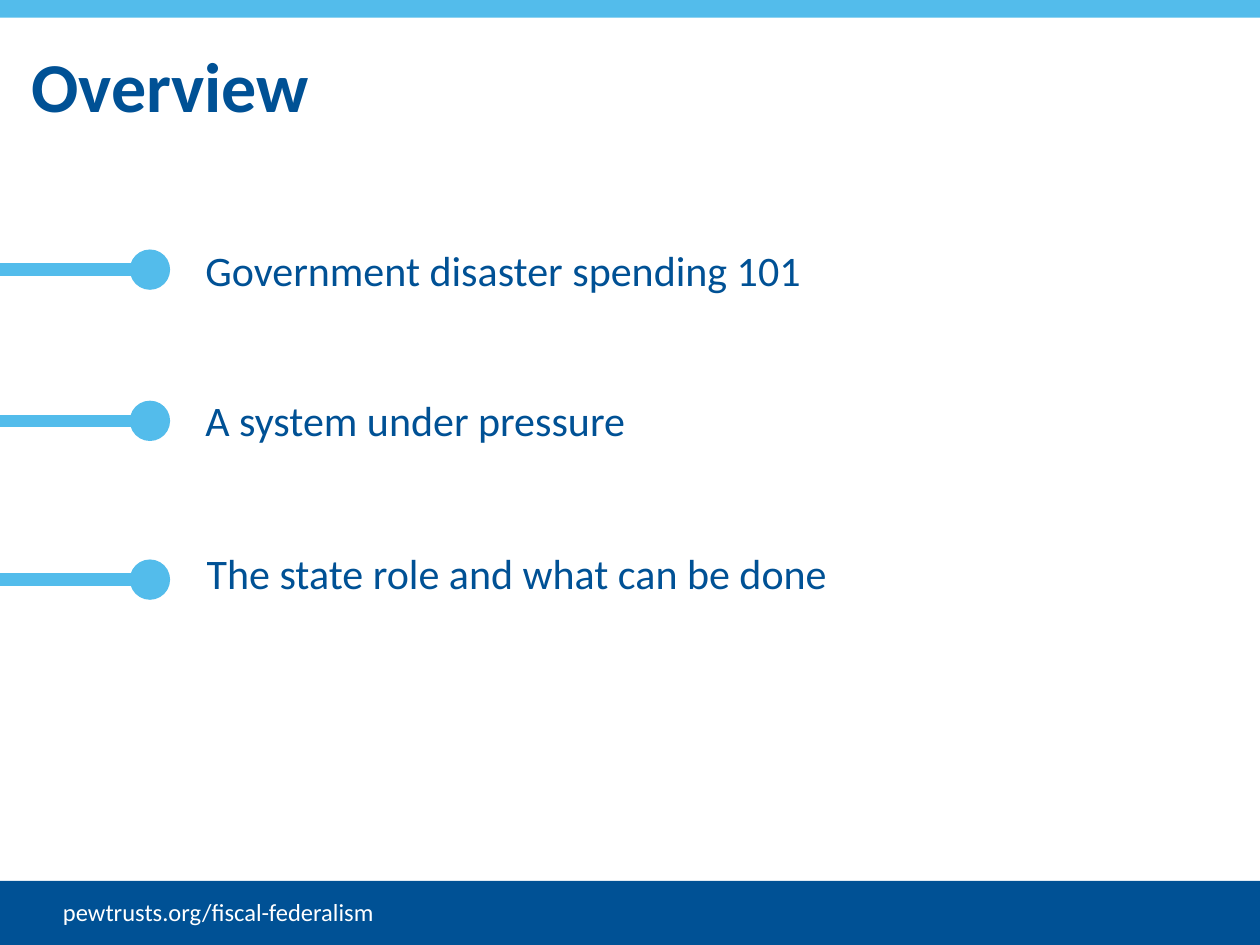
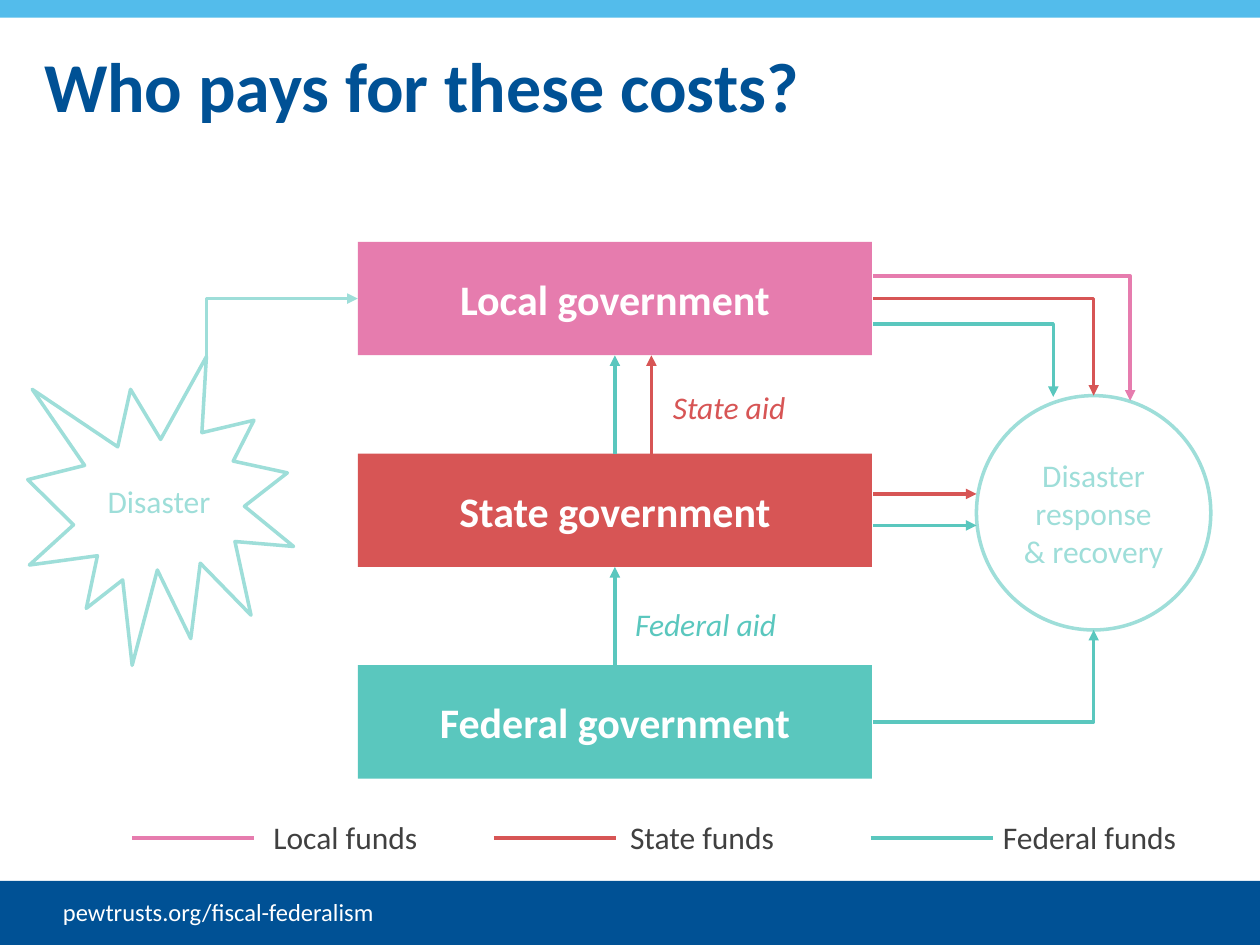
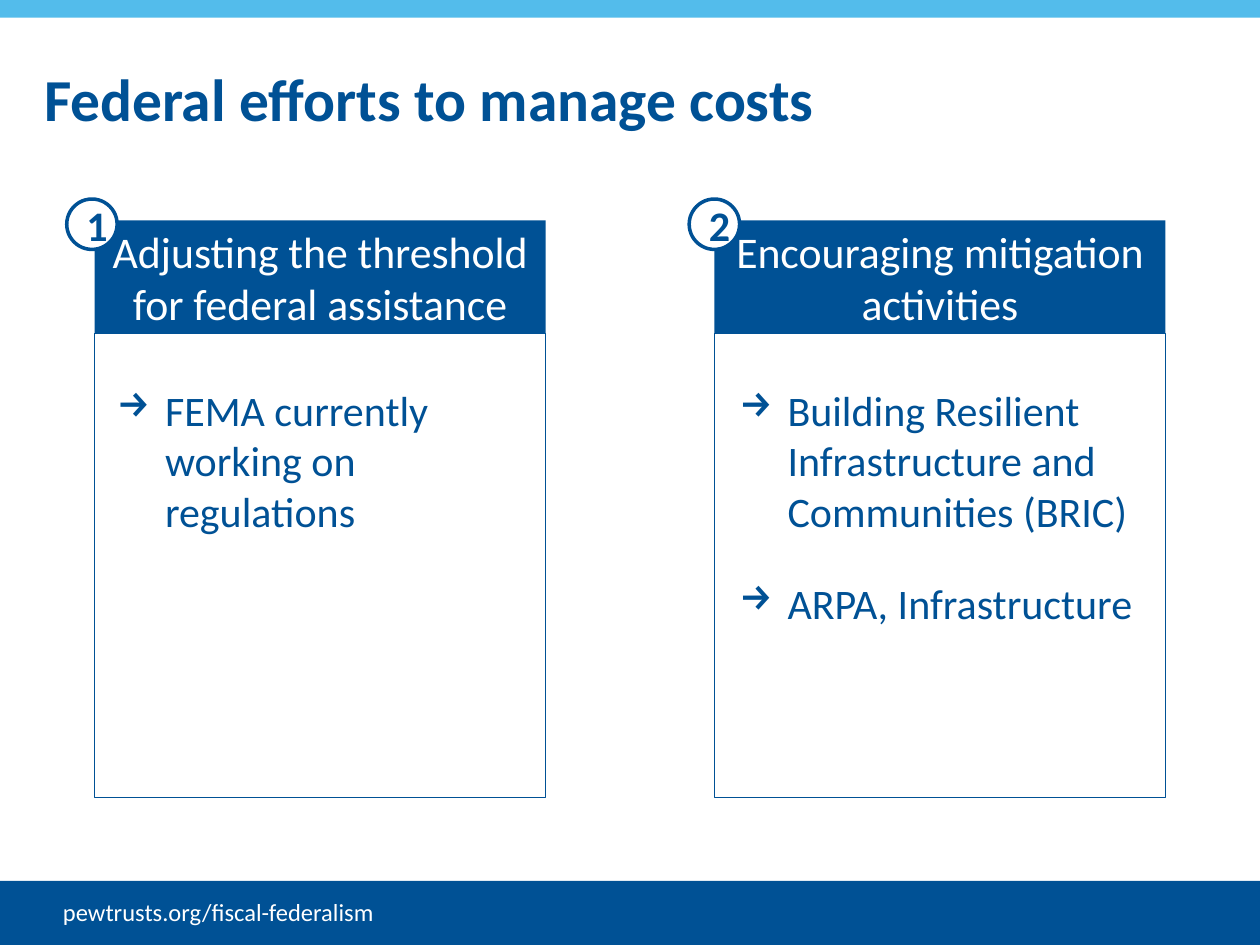
from lxml import etree
from pptx import Presentation
from pptx.dml.color import RGBColor
from pptx.enum.shapes import MSO_CONNECTOR, MSO_SHAPE
from pptx.enum.text import MSO_ANCHOR, PP_ALIGN
from pptx.oxml.ns import qn
from pptx.util import Inches, Pt

RECT, OVAL, BURST = MSO_SHAPE.RECTANGLE, MSO_SHAPE.OVAL, MSO_SHAPE.EXPLOSION1
STRAIGHT, ELBOW = MSO_CONNECTOR.STRAIGHT, MSO_CONNECTOR.ELBOW
LEFT, CENTER = PP_ALIGN.LEFT, PP_ALIGN.CENTER
TOP, MIDDLE = MSO_ANCHOR.TOP, MSO_ANCHOR.MIDDLE
SIDE_TOP, SIDE_BOTTOM = 0, 2

FONT = "Calibri"
NAVY, SKY, WHITE, GRAY = "005195", "53BCEB", "FFFFFF", "404040"
LOCAL, STATE, FEDERAL, DISASTER = "E67CAE", "D75555", "5AC7BE", "9EDED9"


def rgb(value):
    return RGBColor.from_string(value)


def inches(*lengths):
    return [Inches(length) for length in lengths]


def write(frame, paragraphs, size, color, bold=False, italic=False, align=LEFT,
          anchor=TOP, spacing=None, bullet=None):
    frame.word_wrap = True
    frame.vertical_anchor = anchor
    for index, words in enumerate(paragraphs):
        paragraph = frame.paragraphs[0] if index == 0 else frame.add_paragraph()
        paragraph.alignment = align
        if spacing:
            paragraph.line_spacing = spacing
        if bullet:
            paragraph.space_after = Pt(24)
            properties = paragraph._p.get_or_add_pPr()
            properties.set("marL", str(Inches(0.38)))
            properties.set("indent", str(-Inches(0.38)))
            etree.SubElement(properties, qn("a:buChar")).set("char", bullet)
        run = paragraph.add_run()
        run.text = words
        font = run.font
        font.name, font.size = FONT, Pt(size)
        font.bold, font.italic = bold, italic
        font.color.rgb = rgb(color)


def add_label(slide, box, paragraphs, size, color, **style):
    frame = slide.shapes.add_textbox(*inches(*box)).text_frame
    frame.margin_left = frame.margin_right = 0
    write(frame, paragraphs, size, color, **style)


def add_block(slide, kind, box, fill=None, line=None, width=2):
    block = slide.shapes.add_shape(kind, *inches(*box))
    block.shadow.inherit = False
    if fill:
        block.fill.solid()
        block.fill.fore_color.rgb = rgb(fill)
    else:
        block.fill.background()
    if line:
        block.line.color.rgb = rgb(line)
        block.line.width = Pt(width)
    else:
        block.line.fill.background()
    return block


def add_line(slide, start, end, color, width=2, arrow=None, kind=STRAIGHT):
    """Draw a line; arrow is "headEnd" (at start) or "tailEnd" (at end)."""
    line = slide.shapes.add_connector(kind, *inches(*start, *end))
    line.line.color.rgb = rgb(color)
    line.line.width = Pt(width)
    properties = line._element.spPr
    if arrow:
        etree.SubElement(line.line._get_or_add_ln(), qn(f"a:{arrow}")).set("type", "triangle")
    if kind == ELBOW:  # one corner: across first, then up or down
        properties.find(qn("a:prstGeom")).set("prst", "bentConnector2")
    etree.SubElement(properties, qn("a:effectLst"))
    return line


def add_framed_slide(deck, title, left, top, width, size=40):
    """Blank slide with the shared bands, footer address and title."""
    slide = deck.slides.add_slide(deck.slide_layouts[6])
    add_block(slide, RECT, (0, 0, 10, 0.14), SKY)
    add_block(slide, RECT, (0, 6.99, 10, 0.51), NAVY)
    add_label(slide, (0.5, 7.07, 3.83, 0.34), ["pewtrusts.org/fiscal-federalism"], 14, WHITE)
    add_label(slide, (left, top, width, 0.9), [title], size, NAVY,
              bold=True, anchor=MIDDLE, spacing=0.95)
    return slide


def add_topic(slide, middle, text_left, text_top, topic):
    add_block(slide, OVAL, (1.03, middle - 0.16, 0.32, 0.32), SKY)
    add_line(slide, (1.06, middle), (0, middle), SKY, 7)
    add_label(slide, (text_left, text_top, 7.21, 0.5), [topic], 24, NAVY)


def build_overview(deck):
    slide = add_framed_slide(deck, "Overview", 0.25, 0.25, 7.24)
    add_topic(slide, 2.14, 1.63, 1.89, "Government disaster spending 101")
    add_topic(slide, 3.34, 1.63, 3.08, "A system under pressure")
    add_topic(slide, 4.6, 1.64, 4.3, "The state role and what can be done")


def add_governments(slide, left, top):
    """Stack the three levels of government and the aid passed up between them."""
    width, height, pitch = 4.08, 0.9, 1.68
    levels = []
    for index, (name, color) in enumerate(
            [("Local", LOCAL), ("State", STATE), ("Federal", FEDERAL)]):
        level = add_block(slide, RECT, (left, top + index * pitch, width, height), color)
        write(level.text_frame, [f"{name} government"], 24, WHITE, bold=True,
              align=CENTER, anchor=MIDDLE)
        levels.append(level)

    center = left + width / 2
    for index in (1, 0):
        receiver_bottom = top + index * pitch + height
        aid = add_line(slide, (center, top + (index + 1) * pitch),
                       (center, receiver_bottom), FEDERAL, arrow="tailEnd")
        aid.begin_connect(levels[index + 1], SIDE_TOP)
        aid.end_connect(levels[index], SIDE_BOTTOM)
    add_line(slide, (center + 0.29, top + pitch), (center + 0.29, top + height),
             STATE, arrow="tailEnd")
    add_label(slide, (center + 0.16, top + 2.83, 1.42, 0.4), ["Federal aid"], 18,
              FEDERAL, italic=True)
    add_label(slide, (center + 0.46, top + 1.11, 1.42, 0.4), ["State aid"], 18,
              STATE, italic=True)


def add_disaster(slide, left, top):
    burst = add_block(slide, BURST, (left, top, 2.11, 2.45), WHITE, DISASTER)
    write(burst.text_frame, ["Disaster"], 18, DISASTER, align=CENTER, anchor=MIDDLE)
    add_line(slide, (left + 2.62, top - 0.46), (left + 1.42, top), DISASTER,
             arrow="headEnd", kind=ELBOW)


def add_recovery(slide, left, top):
    """Circle on the right and the funds that flow into it."""
    circle = add_block(slide, OVAL, (left, top, 1.86, 1.86), line=DISASTER)
    write(circle.text_frame, ["Disaster response", "& recovery"], 18, DISASTER,
          align=CENTER, anchor=MIDDLE)
    source = left - 0.82
    bent_flows = [(LOCAL, -0.95, 1.22, 0.04), (STATE, -0.77, 0.93, 0),
                  (FEDERAL, -0.57, 0.61, 0.01), (FEDERAL, 2.59, 0.93, 1.86)]
    for color, start_y, end_x, end_y in bent_flows:
        add_line(slide, (source, top + start_y), (left + end_x, top + end_y), color,
                 arrow="tailEnd", kind=ELBOW)
    for color, y in [(STATE, 0.78), (FEDERAL, 1.03)]:
        add_line(slide, (source, top + y), (left, top + y), color, arrow="tailEnd")


def add_legend(slide, top):
    entries = [("Local funds", LOCAL, 1.05, 2.17), ("State funds", STATE, 3.92, 5),
               ("Federal funds", FEDERAL, 6.91, 7.96)]
    for label, color, line_left, label_left in entries:
        add_line(slide, (line_left, top + 0.21), (line_left + 0.97, top + 0.21), color)
        add_label(slide, (label_left, top, 1.42, 0.4), [label], 18, GRAY)


def build_payers(deck):
    slide = add_framed_slide(deck, "Who pays for these costs?", 0.35, 0.25, 7.24)
    add_governments(slide, 2.84, 1.92)
    add_disaster(slide, 0.22, 2.83)
    add_recovery(slide, 7.75, 3.14)
    add_legend(slide, 6.44)


def add_effort(slide, left, top, badge_left, number, heading, actions):
    width, heading_height = 3.58, 0.9
    header = add_block(slide, RECT, (left, top, width, heading_height), NAVY)
    write(header.text_frame, [heading], 25, WHITE, align=CENTER, anchor=MIDDLE)
    badge = add_block(slide, OVAL, (badge_left, top - 0.17, 0.4, 0.4), WHITE, NAVY)
    write(badge.text_frame, [number], 24, NAVY, bold=True, align=CENTER, anchor=MIDDLE)
    add_label(slide, (badge_left + 0.4, top + 1.25, 3.35, 2.05), actions, 24, NAVY,
              bullet="→")
    add_block(slide, RECT, (left, top + heading_height, width, 3.68), line=NAVY, width=0.5)


def build_efforts(deck):
    slide = add_framed_slide(deck, "Federal efforts to manage costs", 0.35, 0.35, 7.8, 34)
    add_effort(slide, 0.75, 1.75, 0.53, "1", "Adjusting the threshold for federal assistance",
               ["FEMA currently working on regulations"])
    add_effort(slide, 5.67, 1.75, 5.47, "2", "Encouraging mitigation activities",
               ["Building Resilient Infrastructure and Communities (BRIC)",
                "ARPA, Infrastructure"])


def main():
    deck = Presentation()
    deck.slide_width, deck.slide_height = inches(10, 7.5)
    build_overview(deck)
    build_payers(deck)
    build_efforts(deck)
    deck.save("out.pptx")


if __name__ == "__main__":
    main()
